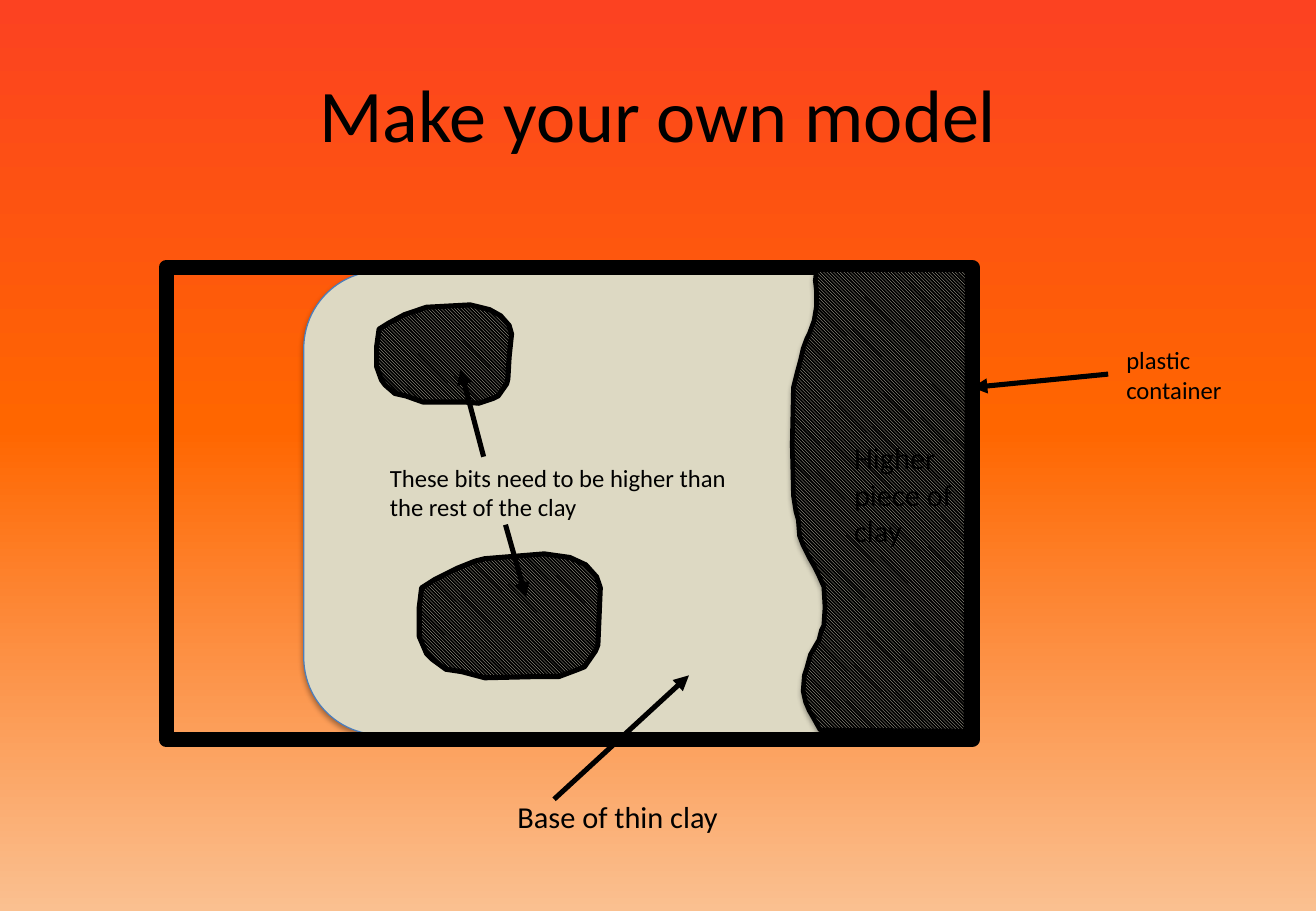
from copy import deepcopy

from lxml.etree import SubElement
from pptx import Presentation
from pptx.dml.color import RGBColor
from pptx.enum.dml import MSO_PATTERN
from pptx.enum.shapes import MSO_CONNECTOR, MSO_SHAPE
from pptx.enum.text import MSO_ANCHOR, PP_ALIGN
from pptx.oxml.ns import qn
from pptx.util import Inches, Pt

COLORS = {"ink": "000000", "clay": "DDD9C3", "clay_edge": "4B7EBC"}
FONT = "Calibri"
BACKGROUND = [(0, "FC4221"), (0.47, "FF6600"), (1, "FAC090")]

TITLE = ("Make your own model", (0.54, 0.3, 9.75, 1.25), 44)
LABELS = [
    ("plastic\ncontainer", (9.17, 2.79, 1.12, 0.59), 14.6),
    ("These bits need to be higher than the rest of the clay", (3.11, 3.76, 3.12, 0.59), 14.6),
    ("Base of thin clay", (4.16, 6.52, 2.17, 0.4), 18),
    ("Higher piece of clay", (6.93, 3.57, 1.1, 1.01), 18),
]
ARROWS = [
    ((4.16, 4.32), (4.33, 4.92)),
    ((3.98, 3.76), (3.79, 3.04)),
    ((9.12, 3.08), (8, 3.19)),
    ((4.56, 6.58), (5.67, 5.56)),
]
BASE = (2.76, 1.97, 3.82, 4.34)
CONTAINER = (1.37, 2.2, 6.63, 3.89)

UPPER_BIT = [
    (3.25, 3.24), (3.17, 3.17), (3.14, 3.13), (3.1, 3.02), (3.1, 2.85), (3.12, 2.71),
    (3.2, 2.66), (3.33, 2.59), (3.45, 2.55), (3.51, 2.53), (3.87, 2.51), (4.03, 2.55),
    (4.12, 2.6), (4.19, 2.68), (4.21, 2.75), (4.19, 2.94), (4.18, 3.12), (4.17, 3.16),
    (4.1, 3.26), (4.06, 3.28), (3.94, 3.32), (3.82, 3.31), (3.48, 3.31), (3.34, 3.26),
]
LOWER_BIT = [
    (3.67, 5.51), (3.56, 5.43), (3.51, 5.38), (3.45, 5.24), (3.45, 5), (3.47, 4.84),
    (3.58, 4.77), (3.76, 4.68), (3.91, 4.62), (3.99, 4.6), (4.48, 4.56), (4.69, 4.59),
    (4.82, 4.65), (4.91, 4.75), (4.94, 4.84), (4.93, 5.08), (4.92, 5.31), (4.9, 5.36),
    (4.81, 5.49), (4.76, 5.51), (4.6, 5.57), (4.43, 5.57), (3.99, 5.58), (3.8, 5.53),
]
HIGHER_PIECE = [
    (6.75, 6.01), (6.7, 5.92), (6.66, 5.85), (6.63, 5.78), (6.61, 5.69), (6.62, 5.56),
    (6.64, 5.5), (6.67, 5.39), (6.71, 5.32), (6.74, 5.27), (6.76, 5.19), (6.78, 5.15),
    (6.79, 5), (6.78, 4.83), (6.74, 4.74), (6.7, 4.66), (6.66, 4.59), (6.61, 4.49),
    (6.58, 4.41), (6.57, 4.28), (6.55, 4.21), (6.53, 4.08), (6.52, 3.66), (6.53, 3.19),
    (6.56, 3.07), (6.59, 2.96), (6.61, 2.87), (6.64, 2.79), (6.66, 2.75), (6.7, 2.64),
    (6.72, 2.52), (6.72, 2.4), (6.71, 2.31), (6.72, 2.22), (7.96, 2.22), (7.95, 6.02),
]


def rgb(name):
    return RGBColor.from_string(COLORS[name])


def paint_background(page):
    fill = page.background.fill
    fill.gradient()
    fill.gradient_angle = 270
    last = list(page.element.iter(qn("a:gs")))[-1]
    last.addnext(deepcopy(last))
    for stop, (position, color) in zip(fill.gradient_stops, BACKGROUND):
        stop.position = position
        stop.color.rgb = RGBColor.from_string(color)


def set_line(shape, color, width):
    shape.line.color.rgb = rgb(color)
    shape.line.width = Pt(width)


def add_soft_shadow(shape):
    effects = shape.element.spPr.find(qn("a:effectLst"))
    shadow = SubElement(effects, qn("a:outerShdw"), blurRad=str(Pt(3.1)),
                        dist=str(Pt(1.8)), dir="5400000", rotWithShape="0")
    color = SubElement(shadow, qn("a:srgbClr"), val=COLORS["ink"])
    SubElement(color, qn("a:alpha"), val="35000")


def add_block(page, kind, place, color, width):
    block = page.shapes.add_shape(kind, *map(Inches, place))
    block.shadow.inherit = False
    block.fill.background()
    set_line(block, color, width)
    return block


def add_clay(page, outline, width):
    points = [(Inches(x), Inches(y)) for x, y in outline]
    builder = page.shapes.build_freeform(*points[0])
    builder.add_line_segments(points[1:], close=True)
    clay = builder.convert_to_shape()
    clay.shadow.inherit = False
    clay.fill.patterned()
    clay.fill.pattern = MSO_PATTERN.DARK_DOWNWARD_DIAGONAL
    clay.fill.fore_color.rgb = rgb("clay")
    clay.fill.back_color.rgb = rgb("ink")
    set_line(clay, "ink", width)
    return clay


def add_arrow(page, start, end):
    arrow = page.shapes.add_connector(MSO_CONNECTOR.STRAIGHT, *map(Inches, start + end))
    set_line(arrow, "ink", 3)
    SubElement(arrow.line._get_or_add_ln(), qn("a:tailEnd"), type="triangle")
    SubElement(arrow.element.spPr, qn("a:effectLst"))


def add_text(page, text, place, size):
    box = page.shapes.add_textbox(*map(Inches, place))
    frame = box.text_frame
    frame.word_wrap = True
    frame.text = text
    for para in frame.paragraphs:
        for span in para.runs:
            span.font.name = FONT
            span.font.size = Pt(size)
            span.font.color.rgb = rgb("ink")
    return frame


def main():
    """Build the clay model slide."""
    deck = Presentation()
    deck.slide_width, deck.slide_height = Inches(10.83), Inches(7.5)
    page = deck.slides.add_slide(deck.slide_layouts[6])
    paint_background(page)

    base = add_block(page, MSO_SHAPE.ROUND_2_SAME_RECTANGLE, BASE, "clay_edge", 0.75)
    base.rotation = 270
    base.fill.solid()
    base.fill.fore_color.rgb = rgb("clay")
    add_soft_shadow(base)

    title = add_text(page, *TITLE)
    title.vertical_anchor = MSO_ANCHOR.MIDDLE
    title.paragraphs[0].alignment = PP_ALIGN.CENTER

    add_block(page, MSO_SHAPE.RECTANGLE, CONTAINER, "ink", 9)
    for outline in (UPPER_BIT, LOWER_BIT):
        add_clay(page, outline, 3)
    add_soft_shadow(add_clay(page, HIGHER_PIECE, 2.75))
    for start, end in ARROWS:
        add_arrow(page, start, end)
    for label in LABELS:
        add_text(page, *label)
    deck.save("out.pptx")


if __name__ == "__main__":
    main()
